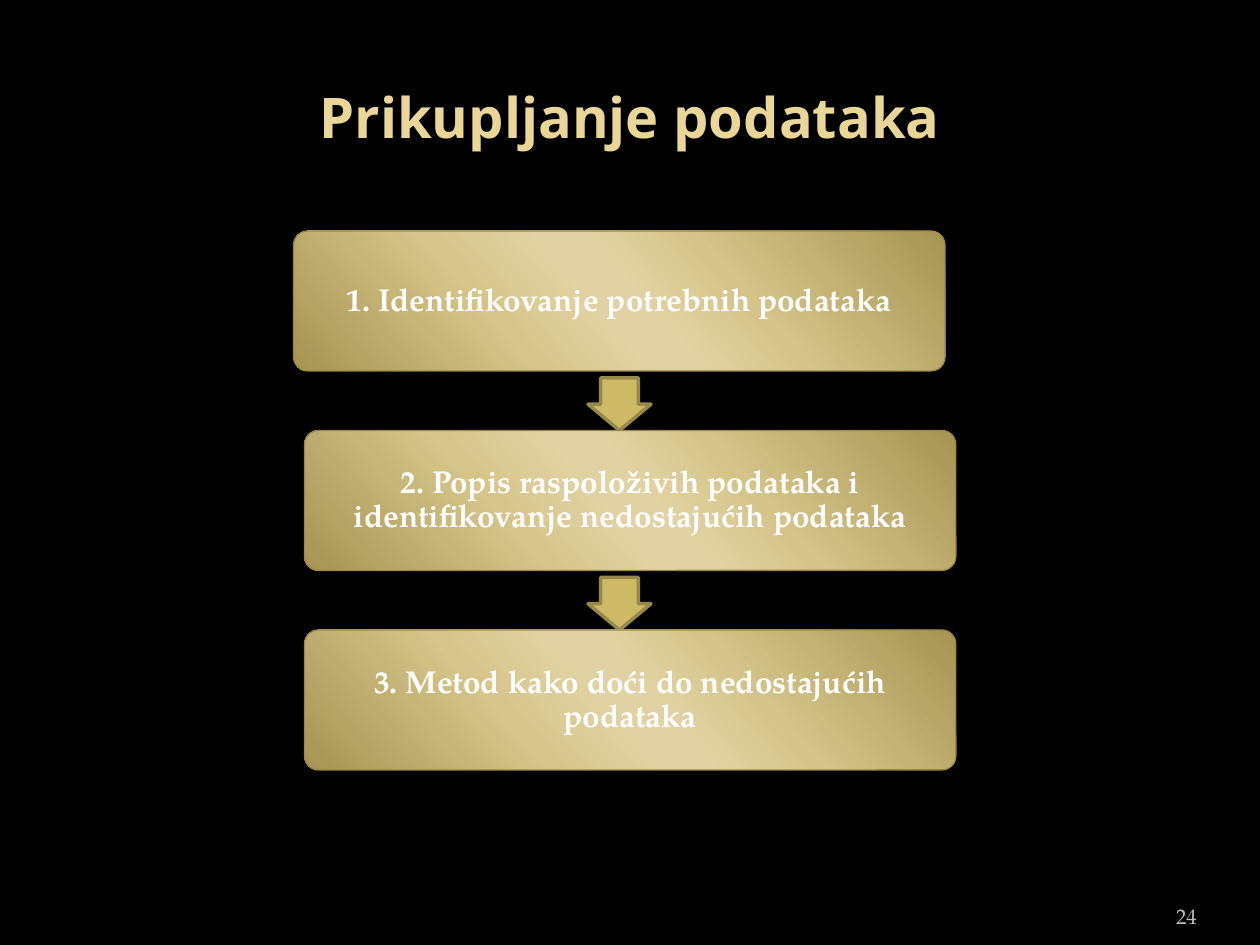
import pptx
import pptx.dml.color
import pptx.enum.shapes
import pptx.enum.text
import pptx.oxml
import pptx.oxml.ns
import pptx.util
from pptx.util import Pt

RGB = pptx.dml.color.RGBColor
SHAPE = pptx.enum.shapes.MSO_SHAPE
ALIGN = pptx.enum.text.PP_ALIGN
ANCHOR = pptx.enum.text.MSO_ANCHOR

BLACK = RGB(0x00, 0x00, 0x00)
WHITE = RGB(0xFF, 0xFF, 0xFF)
GREY = RGB(0xBD, 0xBD, 0xBD)
TITLE_GOLD = RGB(0xEA, 0xD6, 0x96)
ARROW_GOLD = RGB(0xCE, 0xB9, 0x66)
ARROW_LINE = RGB(0x98, 0x89, 0x4B)
STEP_LINE = RGB(0x99, 0x89, 0x46)
DARK_GOLD = RGB(0xA5, 0x94, 0x52)
LIGHT_GOLD = RGB(0xE1, 0xD2, 0xA3)
STEP_GRADIENT = [
    (0, DARK_GOLD), (33, RGB(0xD5, 0xC4, 0x89)), (47, LIGHT_GOLD),
    (53, LIGHT_GOLD), (68, RGB(0xD6, 0xC5, 0x8A)), (100, DARK_GOLD),
]
GRADIENT_ANGLE = 139

TITLE_FONT = "Open Sans"
BODY_FONT = "TeX Gyre Pagella"

# Step text with the left edge of its box
STEPS = [
    ("1. Identifikovanje potrebnih podataka", 167.8),
    ("2. Popis raspoloživih podataka i identifikovanje nedostajućih podataka", 174),
    ("3. Metod kako doći do nedostajućih podataka", 174),
]
STEP_TOP, STEP_PITCH = 132, 114
STEP_WIDTH, STEP_HEIGHT = 372.24, 80
ARROW_LENGTH, ARROW_SPAN = 30, 36
ARROW_CENTER, ARROW_DROP = 354, 99


def set_frame(frame, anchor, side, end):
    frame.word_wrap = True
    frame.auto_size = pptx.enum.text.MSO_AUTO_SIZE.NONE
    frame.vertical_anchor = anchor
    frame.margin_left = frame.margin_right = Pt(side)
    frame.margin_top = frame.margin_bottom = Pt(end)


def write_text(frame, text, font, size, color, align, bold=False):
    para = frame.paragraphs[0]
    para.alignment = align
    span = para.add_run()
    span.text = text
    span.font.name = font
    span.font.size = Pt(size)
    span.font.bold = bold
    span.font.color.rgb = color
    return para


def fill_gradient(shape, stops, angle):
    """Give the shape a linear gradient with any number of stops."""
    stop_xml = "".join(
        f'<a:gs pos="{percent * 1000}"><a:srgbClr val="{color}"/></a:gs>'
        for percent, color in stops
    )
    gradient = pptx.oxml.parse_xml(
        f'<a:gradFill {pptx.oxml.ns.nsdecls("a")} rotWithShape="1">'
        f"<a:gsLst>{stop_xml}</a:gsLst>"
        f'<a:lin ang="{angle * 60000}" scaled="0"/></a:gradFill>'
    )
    shape.element.spPr.find(pptx.oxml.ns.qn("a:prstGeom")).addnext(gradient)


def set_outline(shape, color, width):
    shape.shadow.inherit = False
    shape.line.color.rgb = color
    shape.line.width = Pt(width)


def add_title(page, text):
    title = page.shapes.title
    title.left, title.top = Pt(36), Pt(21.6)
    title.width, title.height = Pt(648), Pt(90)
    set_frame(title.text_frame, ANCHOR.MIDDLE, 7.2, 3.6)
    write_text(title.text_frame, text, TITLE_FONT, 32, TITLE_GOLD,
               ALIGN.CENTER, bold=True)


def add_step(page, text, left, top):
    box = page.shapes.add_shape(SHAPE.ROUNDED_RECTANGLE, Pt(left), Pt(top),
                                Pt(STEP_WIDTH), Pt(STEP_HEIGHT))
    box.adjustments[0] = 0.1
    fill_gradient(box, STEP_GRADIENT, GRADIENT_ANGLE)
    set_outline(box, STEP_LINE, 0.75)
    set_frame(box.text_frame, ANCHOR.MIDDLE, 7.5, 7.5)
    para = write_text(box.text_frame, text, BODY_FONT, 18, WHITE,
                      ALIGN.CENTER, bold=True)
    para.line_spacing = 0.9


def add_arrow(page, center_x, center_y):
    arrow = page.shapes.add_shape(
        SHAPE.RIGHT_ARROW,
        Pt(center_x - ARROW_LENGTH / 2), Pt(center_y - ARROW_SPAN / 2),
        Pt(ARROW_LENGTH), Pt(ARROW_SPAN))
    arrow.rotation = 90
    arrow.adjustments[0] = 0.6
    arrow.adjustments[1] = 0.5
    arrow.fill.solid()
    arrow.fill.fore_color.rgb = ARROW_GOLD
    set_outline(arrow, ARROW_LINE, 2)


def add_page_number(page, number):
    box = page.shapes.add_textbox(Pt(624), Pt(505.5), Pt(60), Pt(28.8))
    set_frame(box.text_frame, ANCHOR.BOTTOM, 0, 3.6)
    write_text(box.text_frame, number, BODY_FONT, 12, GREY, ALIGN.RIGHT)


def main():
    deck = pptx.Presentation()
    deck.slide_width, deck.slide_height = Pt(720), Pt(540)
    page = deck.slides.add_slide(deck.slide_layouts[5])
    page.background.fill.solid()
    page.background.fill.fore_color.rgb = BLACK

    add_title(page, "Prikupljanje podataka")
    add_page_number(page, "24")

    # Steps from top to bottom, with an arrow between neighbours
    for index, (text, left) in enumerate(STEPS):
        top = STEP_TOP + index * STEP_PITCH
        add_step(page, text, left, top)
        if index < len(STEPS) - 1:
            add_arrow(page, ARROW_CENTER, top + ARROW_DROP)

    deck.save("out.pptx")


if __name__ == "__main__":
    main()
